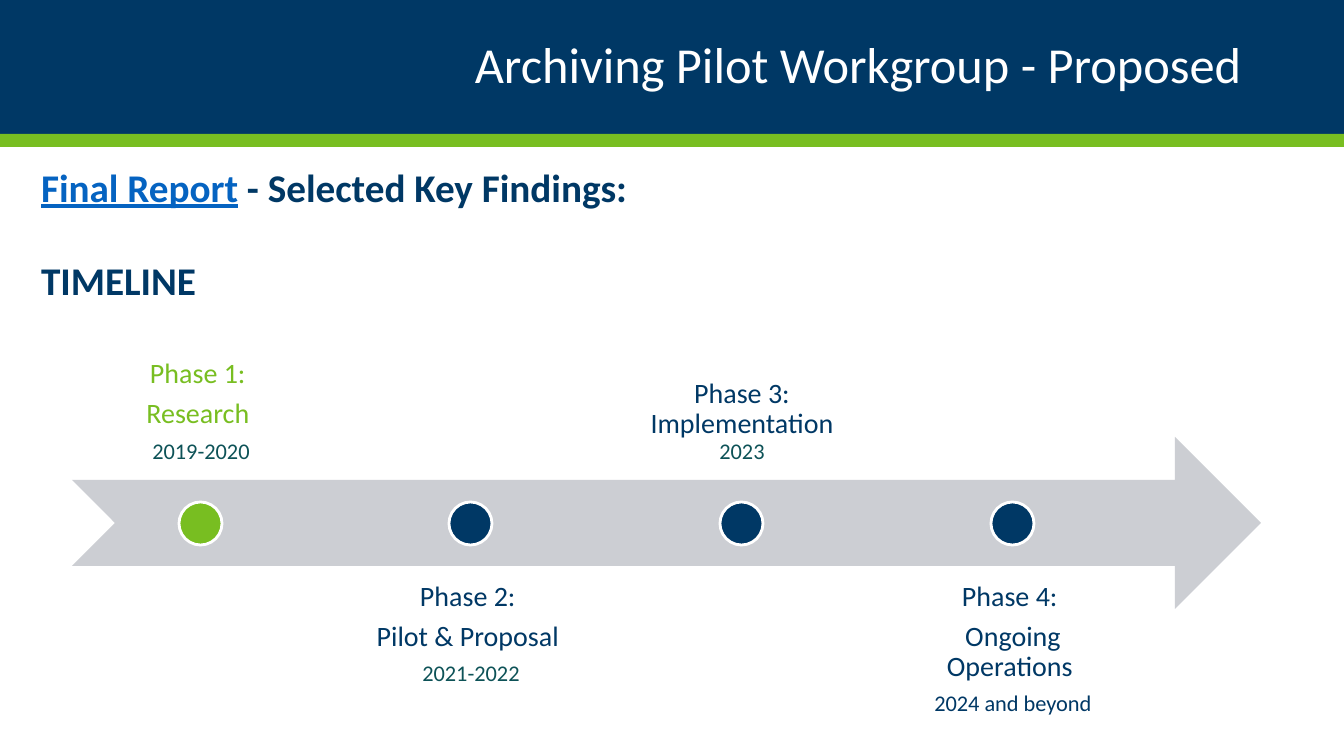
"""Build a slide with a four-phase archiving pilot timeline."""
from lxml import etree
from pptx import Presentation
from pptx.dml.color import RGBColor
from pptx.enum.shapes import MSO_SHAPE
from pptx.enum.text import MSO_ANCHOR, MSO_AUTO_SIZE, PP_ALIGN
from pptx.oxml.ns import qn
from pptx.util import Emu, Pt

NAVY, GREEN, TEAL, WHITE = "003865", "78BE21", "0D5257", "FFFFFF"
GREY, LINK = "CCCED3", "0563C1"


def px(*lengths):
    return [Emu(round(n * 914400 / 100.8)) for n in lengths]


def paint(target, color):
    if hasattr(target, "solid"):
        target.solid()
        target = target.fore_color
    target.rgb = RGBColor.from_string(color)


prs = Presentation()
prs.slide_width, prs.slide_height = px(1344, 756)
s = prs.slides.add_slide(prs.slide_layouts[1])
title, body = s.placeholders

bands = [((0, 0, 1344, 134), NAVY), ((0, 134, 1344, 13), GREEN)]
for z, (box, color) in enumerate(bands, 2):
    sp = s.shapes.add_shape(MSO_SHAPE.RECTANGLE, *px(*box))
    sp.shadow.inherit = False
    paint(sp.fill, color)
    sp.line.fill.background()
    s.shapes._spTree.insert(z, sp._element)

title.left, title.top, title.width, title.height = px(93, 17, 1159, 101)
tf = title.text_frame
tf.text = "Archiving Pilot Workgroup - Proposed"
tf.auto_size = MSO_AUTO_SIZE.NONE
tf.vertical_anchor = MSO_ANCHOR.MIDDLE
p = tf.paragraphs[0]
p.alignment = PP_ALIGN.RIGHT
p.line_spacing = 0.9
font = p.runs[0].font
font.name, font.size = "Calibri", Pt(36)
paint(font.color, WHITE)

body.left, body.top, body.width, body.height = px(31, 158, 1270, 590)
paint(body.fill, WHITE)
tf = body.text_frame
tf.auto_size = MSO_AUTO_SIZE.NONE
headings = [
    (0, [("Final Report", LINK), (" - Selected Key Findings:", NAVY)]),
    (33, [("TIMELINE", NAVY)]),
]
for i, (gap, runs) in enumerate(headings):
    p = tf.paragraphs[0] if i == 0 else tf.add_paragraph()
    p.space_before = Pt(gap)
    pPr = p._p.get_or_add_pPr()
    pPr.set("marL", "0")
    pPr.set("indent", "0")
    etree.SubElement(pPr, qn("a:buNone"))
    for text, color in runs:
        r = p.add_run()
        r.text = text
        r.font.name, r.font.size, r.font.bold = "Calibri", Pt(28), True
        r.font.underline = color == LINK
        paint(r.font.color, color)

arrow = s.shapes.add_shape(MSO_SHAPE.NOTCHED_RIGHT_ARROW, *px(72, 437, 1189, 172))
arrow.shadow.inherit = False
paint(arrow.fill, GREY)
arrow.line.fill.background()

phases = [
    (GREEN, [[("Phase 1: ", 20, GREEN)], [("Research ", 20, GREEN)],
             [("2019-2020", 16, TEAL)]]),
    (NAVY, [[("Phase 2: ", 20, NAVY)], [("Pilot & Proposal ", 20, NAVY)],
            [("2021-2022", 16, TEAL)]]),
    (NAVY, [[("Phase 3: Implementation ", 20, NAVY), ("2023", 16, TEAL)]]),
    (NAVY, [[("Phase 4: ", 20, NAVY)], [("Ongoing Operations ", 20, NAVY)],
            [("2024 and beyond", 16, NAVY)]]),
]
for i, (dot_color, lines) in enumerate(phases):
    left = 72 + i * 812 // 3
    above = i % 2 == 0
    label = s.shapes.add_textbox(*px(left, 308 if above else 566, 258, 172))
    tf = label.text_frame
    tf.word_wrap = True
    tf.vertical_anchor = MSO_ANCHOR.BOTTOM if above else MSO_ANCHOR.TOP
    tf.margin_left, tf.margin_top, tf.margin_right, tf.margin_bottom = px(16, 16, 16, 16)
    for n, runs in enumerate(lines):
        p = tf.paragraphs[0] if n == 0 else tf.add_paragraph()
        p.alignment = PP_ALIGN.CENTER
        p.line_spacing = 0.9
        p.space_after = Pt(7)
        for text, size, color in runs:
            r = p.add_run()
            r.text = text
            r.font.name, r.font.size = "Calibri", Pt(size)
            paint(r.font.color, color)

    dot = s.shapes.add_shape(MSO_SHAPE.OVAL, *px(left + 107, 502, 43, 43))
    dot.shadow.inherit = False
    paint(dot.fill, dot_color)
    paint(dot.line.color, WHITE)
    dot.line.width = Pt(2)

prs.save("out.pptx")
